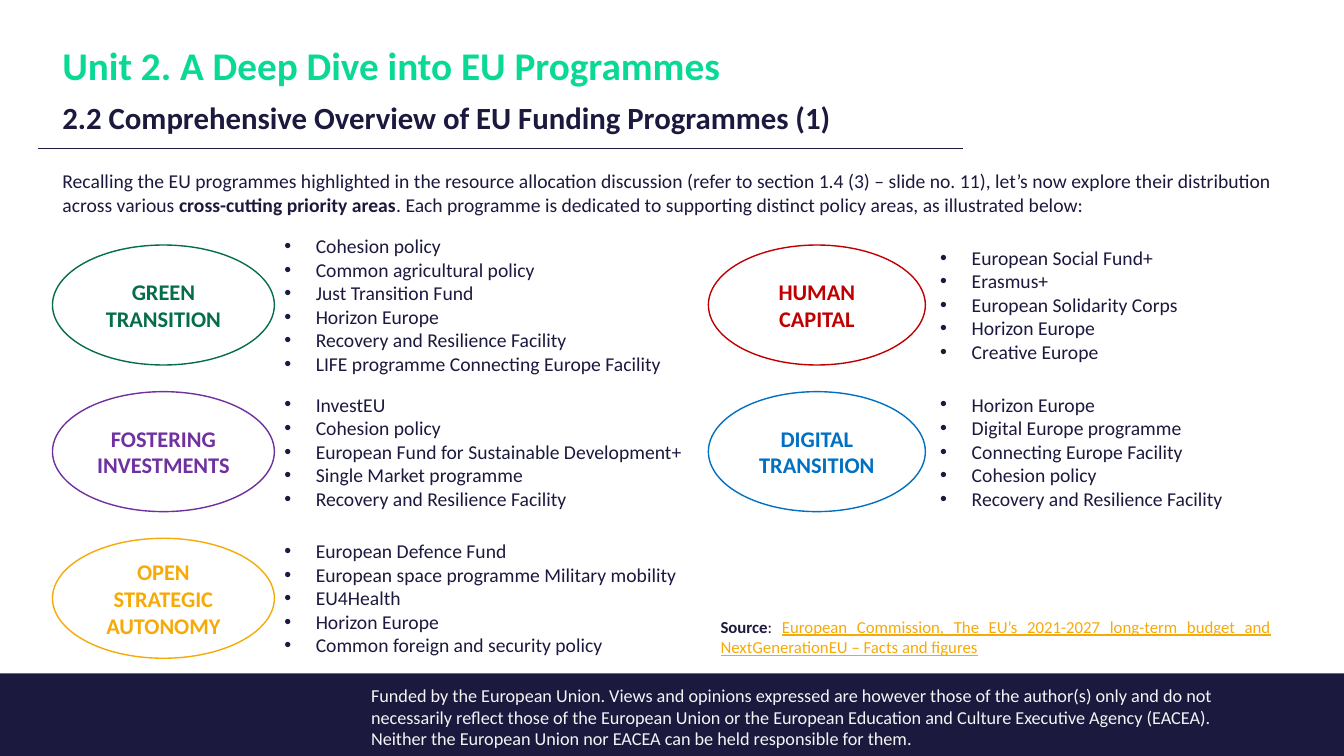
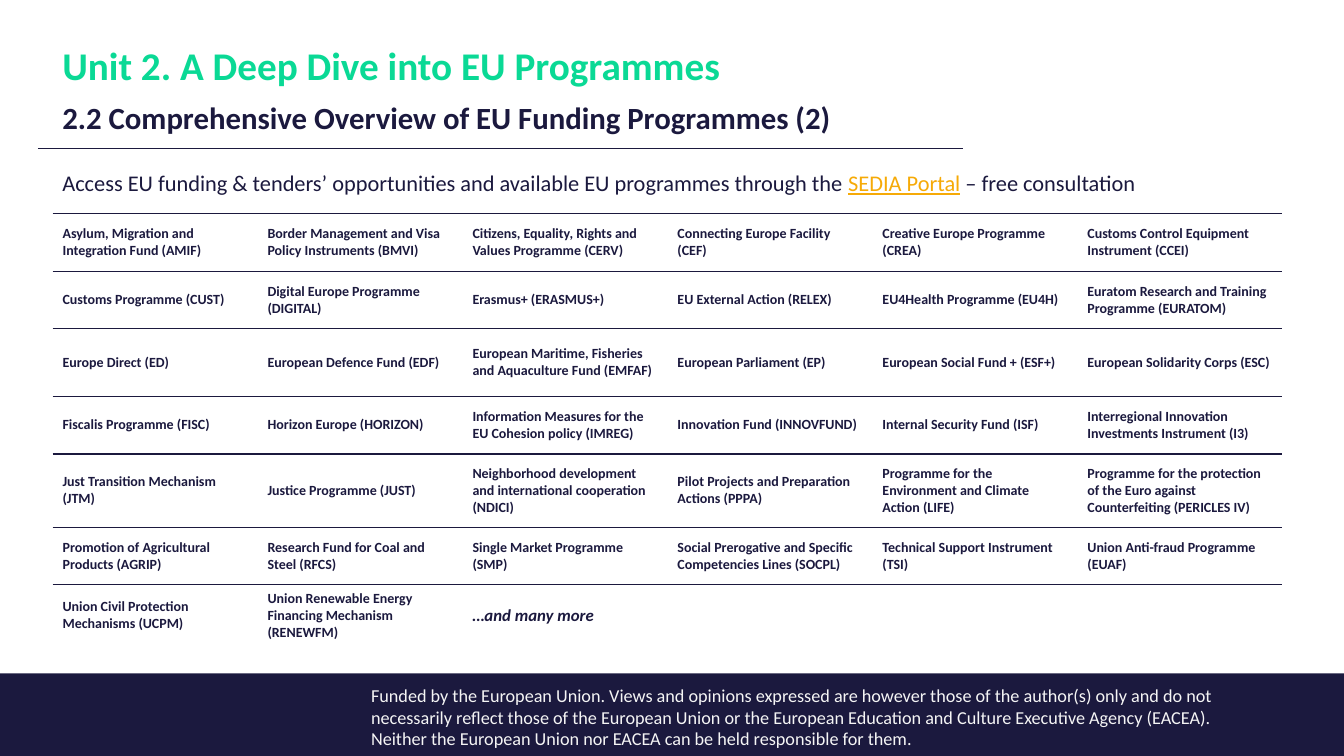
from dataclasses import dataclass

from lxml.etree import Element, SubElement
from pptx import Presentation
from pptx.dml.color import RGBColor
from pptx.enum.shapes import MSO_CONNECTOR, MSO_SHAPE
from pptx.enum.text import MSO_ANCHOR, PP_ALIGN
from pptx.oxml.ns import qn
from pptx.util import Pt


@dataclass(frozen=True)
class Theme:
    font: str = "Calibri"
    # Colours
    navy: str = "1B193E"
    mint: str = "0AD995"
    pale: str = "F5F5F5"
    amber: str = "F6AA07"
    green: str = "056D4B"
    purple: str = "7030A0"
    red: str = "C00000"
    blue: str = "0070C0"
    # Type sizes
    title: int = 28
    subtitle: int = 22
    lead: int = 16
    body: int = 14
    footer: int = 13
    note: int = 12
    cell: int = 10


T = Theme()
WIDTH, HEIGHT = 960, 540
LEFT, CONTENT_W = 37.5, 878.5
UNIT = "Unit 2. A Deep Dive into EU Programmes"
DISCLAIMER = (
    "Funded by the European Union. Views and opinions expressed are however those of the "
    "author(s) only and do not necessarily reflect those of the European Union or the European "
    "Education and Culture Executive Agency (EACEA). Neither the European Union nor EACEA can "
    "be held responsible for them."
)
LINK = dict(color=T.amber, underline=True)


class Deck:
    def __init__(self):
        self.prs = Presentation()
        self.prs.slide_width, self.prs.slide_height = Pt(WIDTH), Pt(HEIGHT)
        self.s = None

    def new_slide(self, subtitle):
        """Start a slide with its footer band, rule and headings."""
        self.s = self.prs.slides.add_slide(self.prs.slide_layouts[6])
        self.shape(MSO_SHAPE.RECTANGLE, 0, 481, WIDTH, 59, fill=T.navy)
        self.text(258, 485, 636.5, 55, [[(DISCLAIMER, dict(color=T.pale))]], T.footer)
        self.rule(27, 688, 106)
        headings = [[(UNIT, dict(size=T.title, color=T.mint, bold=True))],
                    [(subtitle, dict(bold=True))]]
        tf = self.text(LEFT, 36, 718.5, 65, headings, T.subtitle,
                       PP_ALIGN.JUSTIFY, MSO_ANCHOR.BOTTOM)
        for p in tf.paragraphs:
            p.line_spacing = 0.9
        tf.paragraphs[1].space_before = Pt(10)

    def run(self, p, text, size, color=T.navy, bold=False, italic=False, underline=False):
        r = p.add_run()
        r.text = text
        f = r.font
        f.name, f.size, f.color.rgb = T.font, Pt(size), RGBColor.from_string(color)
        f.bold, f.italic, f.underline = bold, italic, underline

    def text(self, x, y, w, h, paragraphs, size, align=PP_ALIGN.LEFT, anchor=MSO_ANCHOR.TOP):
        """Each paragraph is a list of (text, style) runs."""
        tf = self.s.shapes.add_textbox(Pt(x), Pt(y), Pt(w), Pt(h)).text_frame
        tf.word_wrap, tf.vertical_anchor = True, anchor
        for i, runs in enumerate(paragraphs):
            p = tf.add_paragraph() if i else tf.paragraphs[0]
            p.alignment = align
            for text, style in runs:
                self.run(p, text, **{"size": size, **style})
        return tf

    def bullets(self, x, middle, w, items):
        """A bulleted list centred on the height given."""
        h = 16.9 * len(items) + 7.2
        tf = self.text(x, middle - h / 2, w, h, [[(item, {})] for item in items], T.body)
        for p in tf.paragraphs:
            pPr = p._p.get_or_add_pPr()
            pPr.set("marL", str(Pt(22.5)))
            pPr.set("indent", str(-Pt(22.5)))
            SubElement(pPr, qn("a:buFont"), typeface="Arial")
            SubElement(pPr, qn("a:buChar"), char="•")

    def shape(self, kind, x, y, w, h, fill=None, line=None):
        sp = self.s.shapes.add_shape(kind, Pt(x), Pt(y), Pt(w), Pt(h))
        sp.shadow.inherit = False
        if fill:
            sp.fill.solid()
            sp.fill.fore_color.rgb = RGBColor.from_string(fill)
        else:
            sp.fill.background()
        if line:
            sp.line.color.rgb, sp.line.width = RGBColor.from_string(line), Pt(1)
        else:
            sp.line.fill.background()
        return sp

    def oval(self, x, y, w, h, lines, color):
        tf = self.shape(MSO_SHAPE.OVAL, x, y, w, h, line=color).text_frame
        tf.word_wrap, tf.vertical_anchor = True, MSO_ANCHOR.MIDDLE
        p = tf.paragraphs[0]
        p.alignment = PP_ALIGN.CENTER
        for i, line in enumerate(lines):
            if i:
                p.add_line_break()
            self.run(p, line, T.lead, color, bold=True)

    def rule(self, x1, x2, y):
        c = self.s.shapes.add_connector(MSO_CONNECTOR.STRAIGHT, Pt(x1), Pt(y), Pt(x2), Pt(y))
        c.line.color.rgb, c.line.width = RGBColor.from_string(T.navy), Pt(1)
        SubElement(c._element.spPr, qn("a:effectLst"))

    def border(self, cell, side):
        ln = Element(qn(f"a:{side}"), w=str(Pt(1)))
        SubElement(SubElement(ln, qn("a:solidFill")), qn("a:srgbClr"), val=T.navy)
        cell._tc.get_or_add_tcPr().insert(0, ln)

    def table(self, x, y, w, heights, rows):
        """Cells with a line above each; rows may be shorter than the grid."""
        cols = len(rows[0])
        table = self.s.shapes.add_table(len(rows), cols, Pt(x), Pt(y), Pt(w),
                                        Pt(sum(heights))).table
        table.first_row = table.horz_banding = False
        style = table._tbl.tblPr.find(qn("a:tableStyleId"))
        style.text = "{2D5ABB26-0587-4C30-8999-92F81FD0307C}"
        for col in table.columns:
            col.width = Pt(w / cols)
        for i, h in enumerate(heights):
            table.rows[i].height = Pt(h)
            for j in range(cols):
                cell = table.cell(i, j)
                cell.fill.background()
                cell.vertical_anchor = MSO_ANCHOR.MIDDLE
                if i + 1 < len(rows) and j < len(rows[i + 1]):
                    self.border(cell, "lnB")
                if j < len(rows[i]):
                    self.border(cell, "lnT")
                    self.run(cell.text_frame.paragraphs[0], rows[i][j], T.cell, bold=True)
        return table


# Priority areas: column, row, label lines, colour, programmes
AREAS = [
    (0, 0, ["GREEN", "TRANSITION"], T.green,
     ["Cohesion policy", "Common agricultural policy", "Just Transition Fund", "Horizon Europe",
      "Recovery and Resilience Facility", "LIFE programme Connecting Europe Facility"]),
    (0, 1, ["FOSTERING", "INVESTMENTS"], T.purple,
     ["InvestEU", "Cohesion policy", "European Fund for Sustainable Development+",
      "Single Market programme", "Recovery and Resilience Facility"]),
    (0, 2, ["OPEN", "STRATEGIC", "AUTONOMY"], T.amber,
     ["European Defence Fund", "European space programme Military mobility", "EU4Health",
      "Horizon Europe", "Common foreign and security policy"]),
    (1, 0, ["HUMAN", "CAPITAL"], T.red,
     ["European Social Fund+", "Erasmus+", "European Solidarity Corps", "Horizon Europe",
      "Creative Europe"]),
    (1, 1, ["DIGITAL", "TRANSITION"], T.blue,
     ["Horizon Europe", "Digital Europe programme", "Connecting Europe Facility",
      "Cohesion policy", "Recovery and Resilience Facility"]),
]
# For each column: oval left, oval width, list left, list width
COLUMNS = [(LEFT, 158.5, 196, 308), (506, 155, 664.5, 223)]
OVAL_TOP, OVAL_H, OVAL_PITCH = 175, 85.7, 104.75

PROGRAMMES = [
    ["Asylum, Migration and Integration Fund (AMIF)",
     "Border Management and Visa Policy Instruments (BMVI)",
     "Citizens, Equality, Rights and Values Programme (CERV)",
     "Connecting Europe Facility (CEF)",
     "Creative Europe Programme (CREA)",
     "Customs Control Equipment Instrument (CCEI)"],
    ["Customs Programme (CUST)",
     "Digital Europe Programme (DIGITAL)",
     "Erasmus+ (ERASMUS+)",
     "EU External Action (RELEX)",
     "EU4Health Programme (EU4H)",
     "Euratom Research and Training Programme (EURATOM)"],
    ["Europe Direct (ED)",
     "European Defence Fund (EDF)",
     "European Maritime, Fisheries and Aquaculture Fund (EMFAF)",
     "European Parliament (EP)",
     "European Social Fund + (ESF+)",
     "European Solidarity Corps (ESC)"],
    ["Fiscalis Programme (FISC)",
     "Horizon Europe (HORIZON)",
     "Information Measures for the EU Cohesion policy (IMREG)",
     "Innovation Fund (INNOVFUND)",
     "Internal Security Fund (ISF)",
     "Interregional Innovation Investments Instrument (I3)"],
    ["Just Transition Mechanism (JTM)",
     "Justice Programme (JUST)",
     "Neighborhood development and international cooperation (NDICI)",
     "Pilot Projects and Preparation Actions (PPPA)",
     "Programme for the Environment and Climate Action (LIFE)",
     "Programme for the protection of the Euro against Counterfeiting (PERICLES IV)"],
    ["Promotion of Agricultural Products (AGRIP)",
     "Research Fund for Coal and Steel (RFCS)",
     "Single Market Programme (SMP)",
     "Social Prerogative and Specific Competencies Lines (SOCPL)",
     "Technical Support Instrument (TSI)",
     "Union Anti-fraud Programme (EUAF)"],
    ["Union Civil Protection Mechanisms (UCPM)",
     "Union Renewable Energy Financing Mechanism (RENEWFM)"],
]
ROW_HEIGHTS = [41, 41, 48.5, 41, 52.5, 41, 44]


def priority_areas(deck):
    deck.new_slide("2.2 Comprehensive Overview of EU Funding Programmes (1)")
    intro = [
        ("Recalling the EU programmes highlighted in the resource allocation discussion (refer to "
         "section 1.4 (3) – slide no. 11), let’s now explore their distribution across various ", {}),
        ("cross-cutting priority areas", dict(bold=True)),
        (". Each programme is dedicated to supporting distinct policy areas, as illustrated below:",
         {}),
    ]
    deck.text(LEFT, 117.4, CONTENT_W, 41, [intro], T.body, PP_ALIGN.JUSTIFY)
    # Ovals with their programme lists
    for col, row, label, color, programmes in AREAS:
        oval_x, oval_w, list_x, list_w = COLUMNS[col]
        top = OVAL_TOP + row * OVAL_PITCH
        deck.oval(oval_x, top, oval_w, OVAL_H, label, color)
        deck.bullets(list_x, top + OVAL_H / 2, list_w, programmes)
    # Source line
    source = [("Source", dict(bold=True)), (": ", {}),
              ("European Commission, The EU’s 2021-2027 long-term budget and NextGenerationEU – "
               "Facts and figures", LINK)]
    deck.text(507.6, 437, 407.5, 36, [source], T.note, PP_ALIGN.JUSTIFY)


def programme_list(deck):
    deck.new_slide("2.2 Comprehensive Overview of EU Funding Programmes (2)")
    intro = [("Access EU funding & tenders’ opportunities and available EU programmes through the ",
              {}), ("SEDIA Portal", LINK), (" – free consultation", {})]
    deck.text(LEFT, 117.4, CONTENT_W, 26.6, [intro], T.lead, PP_ALIGN.JUSTIFY)
    table = deck.table(LEFT, 152.8, CONTENT_W, ROW_HEIGHTS, PROGRAMMES)
    # Closing remark across two columns
    more = table.cell(6, 2)
    more.merge(table.cell(6, 3))
    deck.run(more.text_frame.paragraphs[0], "…and many more", T.note, bold=True, italic=True)


def main():
    deck = Deck()
    priority_areas(deck)
    programme_list(deck)
    deck.prs.save("out.pptx")


if __name__ == "__main__":
    main()
